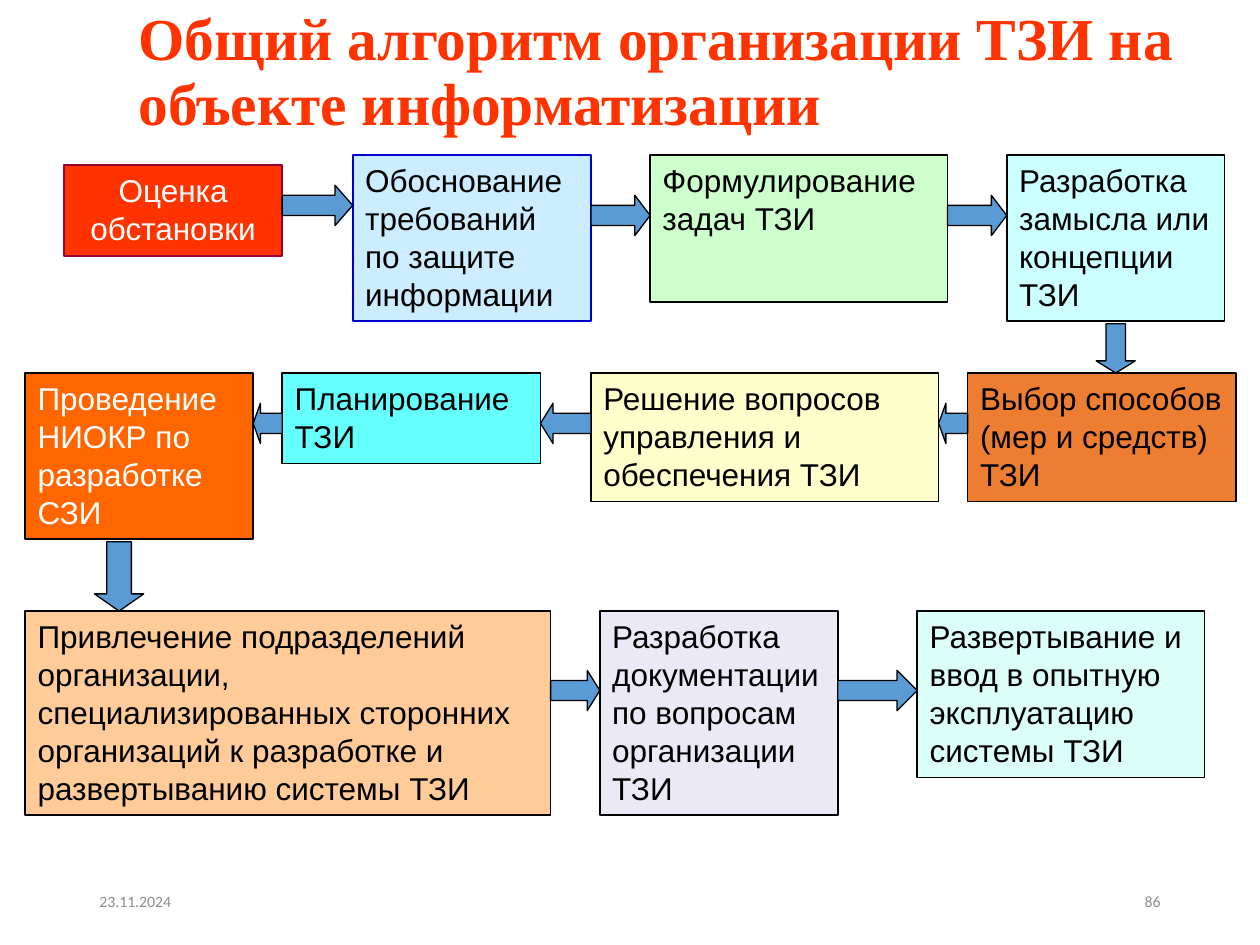
from pptx import Presentation
from pptx.dml.color import RGBColor
from pptx.enum.shapes import MSO_SHAPE
from pptx.enum.text import MSO_ANCHOR, PP_ALIGN
from pptx.util import Inches, Pt

BLACK = RGBColor(0x00, 0x00, 0x00)
WHITE = RGBColor(0xFF, 0xFF, 0xFF)
GRAY = RGBColor(0x8C, 0x8C, 0x8C)
RED = RGBColor(0xFF, 0x33, 0x00)
CRIMSON = RGBColor(0x99, 0x00, 0x33)
NAVY = RGBColor(0x00, 0x00, 0xCC)
SKY = RGBColor(0xCC, 0xEC, 0xFF)
GREEN = RGBColor(0xCC, 0xFF, 0xCC)
PALE_CYAN = RGBColor(0xCC, 0xFF, 0xFF)
RUST = RGBColor(0xED, 0x7D, 0x31)
YELLOW = RGBColor(0xFF, 0xFF, 0xCC)
CYAN = RGBColor(0x66, 0xFF, 0xFF)
ORANGE = RGBColor(0xFF, 0x66, 0x00)
PEACH = RGBColor(0xFF, 0xCC, 0x99)
LAVENDER = RGBColor(0xEA, 0xE9, 0xF5)
MINT = RGBColor(0xDC, 0xFE, 0xF9)
ARROW_BLUE = RGBColor(0x5B, 0x9B, 0xD5)

ROW_2, ROW_3 = 2.96, 4.85
STEPS = {
    "assessment": ("Оценка обстановки", 0.51, 1.31, 1.73, 0.72, RED),
    "requirements": ("Обоснование требований по защите информации", 2.8, 1.23, 1.89, 1.32, SKY),
    "tasks": ("Формулирование задач ТЗИ", 5.16, 1.23, 2.36, 1.17, GREEN),
    "concept": ("Разработка замысла или концепции ТЗИ", 7.99, 1.23, 1.73, 1.32, PALE_CYAN),
    "methods": ("Выбор способов (мер и средств) ТЗИ", 7.68, ROW_2, 2.13, 1.02, RUST),
    "management": ("Решение вопросов управления и обеспечения ТЗИ", 4.69, ROW_2, 2.76, 1.02, YELLOW),
    "planning": ("Планирование ТЗИ", 2.24, ROW_2, 2.05, 0.72, CYAN),
    "research": ("Проведение НИОКР по разработке СЗИ", 0.2, ROW_2, 1.81, 1.32, ORANGE),
    "contractors": (
        "Привлечение подразделений организации, специализированных сторонних "
        "организаций к разработке и развертыванию системы ТЗИ",
        0.2, ROW_3, 4.17, 1.62, PEACH),
    "documents": ("Разработка документации по вопросам организации ТЗИ", 4.76, ROW_3, 1.89, 1.62, LAVENDER),
    "deployment": ("Развертывание и ввод в опытную эксплуатацию системы ТЗИ", 7.28, ROW_3, 2.28, 1.32, MINT),
}
OUTLINES = {"assessment": CRIMSON, "requirements": NAVY}
LIGHT_TEXT = {"assessment", "research"}

HORIZONTAL_ARROWS = [
    ("assessment", "requirements", 1.47, 0.44),
    ("requirements", "tasks", 1.55, 0.38),
    ("tasks", "concept", 1.55, 0.38),
    ("management", "methods", 3.2, 0.25),
    ("planning", "management", 3.2, 0.31),
    ("research", "planning", 3.2, 0.25),
    ("contractors", "documents", 5.32, 0.31),
    ("documents", "deployment", 5.32, 0.5),
]
VERTICAL_ARROWS = [
    ("concept", "methods", 8.7, 0.31, 0.31),
    ("research", "contractors", 0.75, 0.39, 0.35),
]


def add_label(slide, text, box, font_name, size, color, bold=False,
              align=PP_ALIGN.LEFT, line_spacing=1.0):
    """Add a vertically centred text box."""
    frame = slide.shapes.add_textbox(*map(Inches, box)).text_frame
    frame.word_wrap = True
    frame.vertical_anchor = MSO_ANCHOR.MIDDLE
    frame.text = text
    style_paragraph(frame.paragraphs[0], font_name, size, color, bold, align)
    frame.paragraphs[0].line_spacing = line_spacing


def style_paragraph(paragraph, font_name, size, color, bold, align):
    """Set the font and alignment of a paragraph."""
    paragraph.alignment = align
    paragraph.font.name = font_name
    paragraph.font.size = Pt(size)
    paragraph.font.bold = bold
    paragraph.font.color.rgb = color


def add_filled_shape(slide, kind, box, fill, outline, width):
    """Add a preset shape with a solid fill, an outline and no shadow."""
    shape = slide.shapes.add_shape(kind, *box)
    shape.shadow.inherit = False
    shape.fill.solid()
    shape.fill.fore_color.rgb = fill
    shape.line.color.rgb = outline
    shape.line.width = Pt(width)
    return shape


def add_step(slide, name):
    """Add one step of the algorithm and return its rectangle."""
    text, left, top, width, height, fill = STEPS[name]
    box = map(Inches, (left, top, width, height))
    shape = add_filled_shape(slide, MSO_SHAPE.RECTANGLE, box, fill, OUTLINES.get(name, BLACK), 1)
    frame = shape.text_frame
    frame.word_wrap = True
    frame.vertical_anchor = MSO_ANCHOR.TOP
    frame.text = text
    align = PP_ALIGN.CENTER if name == "assessment" else PP_ALIGN.LEFT
    color = WHITE if name in LIGHT_TEXT else BLACK
    style_paragraph(frame.paragraphs[0], "Arial", 18, color, False, align)
    return shape


def add_arrow(slide, kind, box, head):
    """Add a block arrow with the given head length ratio."""
    arrow = add_filled_shape(slide, kind, box, ARROW_BLUE, BLACK, 0.75)
    arrow.adjustments[0] = 0.5
    arrow.adjustments[1] = head


def add_horizontal_arrow(slide, left_step, right_step, top, head):
    """Fill the gap between two neighbours, pointing left in the second row."""
    start = left_step.left + left_step.width
    kind = MSO_SHAPE.LEFT_ARROW if left_step.top == Inches(ROW_2) else MSO_SHAPE.RIGHT_ARROW
    add_arrow(slide, kind, (start, Inches(top), right_step.left - start, Inches(0.32)), head)


def add_vertical_arrow(slide, upper_step, lower_step, left, width, head):
    """Point down from one row to the next."""
    start = upper_step.top + upper_step.height + Inches(0.02)
    box = (Inches(left), start, Inches(width), lower_step.top - start)
    add_arrow(slide, MSO_SHAPE.DOWN_ARROW, box, head)


def main():
    """Build the slide and save the presentation."""
    presentation = Presentation()
    presentation.slide_width, presentation.slide_height = Inches(10), Inches(7.5)
    slide = presentation.slides.add_slide(presentation.slide_layouts[6])

    add_label(slide, "23.11.2024", (0.69, 6.95, 2.25, 0.4), "Calibri", 9, GRAY)
    add_label(slide, "86", (7.06, 6.95, 2.25, 0.4), "Calibri", 9, GRAY, align=PP_ALIGN.RIGHT)
    add_label(slide, "Общий алгоритм организации ТЗИ на объекте информатизации",
              (1, 0, 9, 1.17), "Times New Roman", 34, RED, bold=True, line_spacing=0.9)

    steps = {name: add_step(slide, name) for name in STEPS}
    for left_name, right_name, top, head in HORIZONTAL_ARROWS:
        add_horizontal_arrow(slide, steps[left_name], steps[right_name], top, head)
    for upper_name, lower_name, left, width, head in VERTICAL_ARROWS:
        add_vertical_arrow(slide, steps[upper_name], steps[lower_name], left, width, head)

    presentation.save("out.pptx")


if __name__ == "__main__":
    main()
